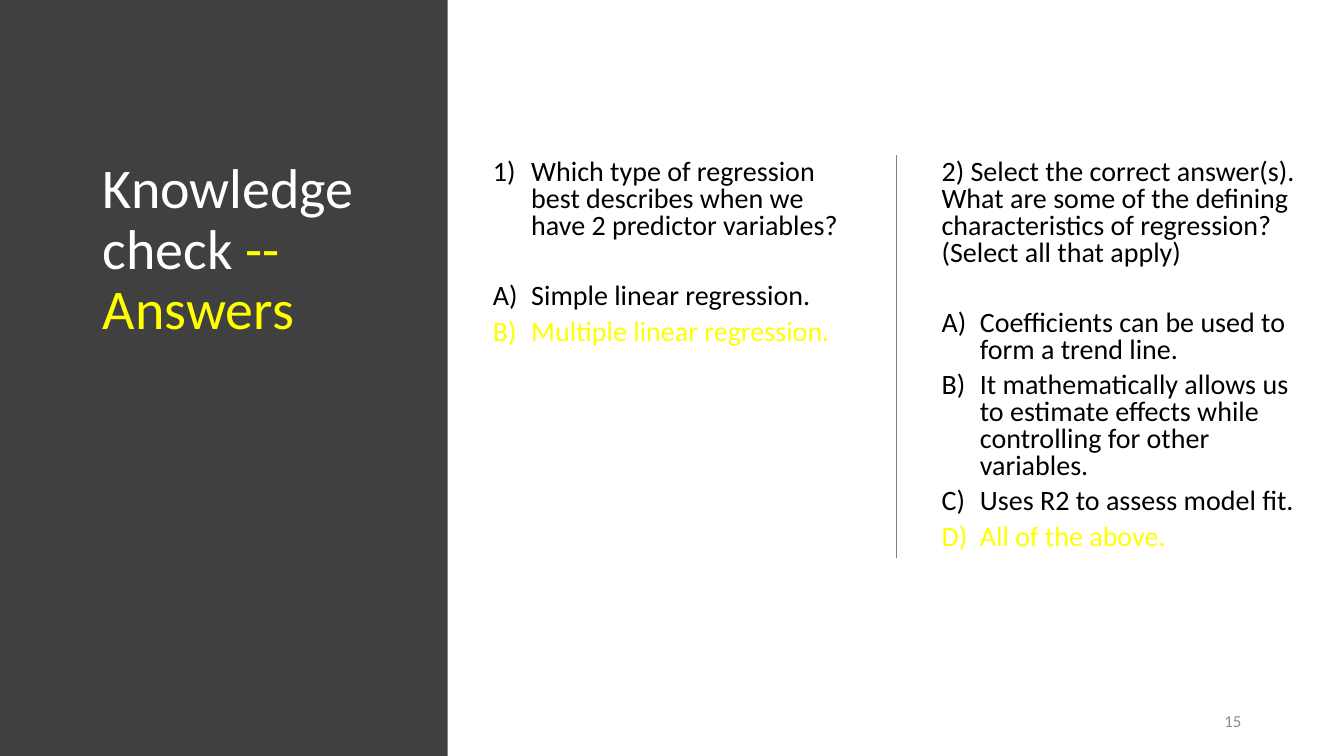
from lxml.etree import SubElement
from pptx import Presentation
from pptx.dml.color import RGBColor
from pptx.enum.shapes import MSO_CONNECTOR, MSO_SHAPE
from pptx.enum.text import MSO_ANCHOR, MSO_AUTO_SIZE, PP_ALIGN
from pptx.oxml.ns import qn
from pptx.util import Inches, Pt

BLACK, WHITE, YELLOW = "000000", "FFFFFF", "FFFF00"
COLUMN_TOP = 1.54
HANGING = 0.38
QUESTION_GAP = 31
ANSWER_GAP = 6


def color(hex_value):
    """Return the colour for a hex string."""
    return RGBColor.from_string(hex_value)


def apply(target, formats):
    """Set each attribute of the target from a dict."""
    for name, value in formats.items():
        setattr(target, name, value)


def place(shape, left, top, width, height):
    """Position a shape, in inches."""
    apply(shape, {"left": Inches(left), "top": Inches(top),
                  "width": Inches(width), "height": Inches(height)})


def add_run(paragraph, text, size, hex_value):
    """Add a Calibri run to a paragraph."""
    run = paragraph.add_run()
    run.text = text
    apply(run.font, {"name": "Calibri", "size": Pt(size)})
    run.font.color.rgb = color(hex_value)


def add_text_box(slide, left, top, width, height, anchor=MSO_ANCHOR.TOP):
    """Add a wrapping text box and return its text frame."""
    frame = slide.shapes.add_textbox(
        Inches(left), Inches(top), Inches(width), Inches(height)).text_frame
    apply(frame, {"word_wrap": True, "auto_size": MSO_AUTO_SIZE.NONE,
                  "vertical_anchor": anchor})
    return frame


def number(paragraph, scheme):
    """Give a paragraph automatic numbering with a hanging indent."""
    properties = paragraph._p.get_or_add_pPr()
    properties.set("marL", str(Inches(HANGING)))
    properties.set("indent", str(-Inches(HANGING)))
    SubElement(properties, qn("a:buFont"), typeface="Calibri")
    SubElement(properties, qn("a:buAutoNum"), type=scheme)


def add_question(slide, left, question, answers, correct, scheme=None):
    """Add a question with lettered answers, the correct one in yellow."""
    frame = add_text_box(slide, left, COLUMN_TOP, 3.75, 4.77)
    rows = [(question, scheme, QUESTION_GAP, BLACK)]
    rows += [(answer, "alphaUcParenR", ANSWER_GAP,
              YELLOW if answer == correct else BLACK) for answer in answers]
    for index, (text, numbering, gap, hex_value) in enumerate(rows):
        paragraph = frame.add_paragraph() if index else frame.paragraphs[0]
        apply(paragraph, {"line_spacing": 0.8, "space_after": Pt(gap)})
        if numbering:
            number(paragraph, numbering)
        add_run(paragraph, text, 20, hex_value)


def add_panel(slide):
    """Add the dark panel behind the title."""
    panel = slide.shapes.add_shape(
        MSO_SHAPE.RECTANGLE, 0, 0, Inches(4.44), Inches(7.5))
    panel.shadow.inherit = False
    panel.fill.solid()
    panel.fill.fore_color.rgb = color("404040")
    panel.line.fill.background()
    slide.shapes.element.insert(2, panel.element)


def fill_title(slide):
    """Place and write the two-coloured title."""
    title = slide.shapes.title
    place(title, 0.92, COLUMN_TOP, 3.17, 4.77)
    apply(title.text_frame, {"vertical_anchor": MSO_ANCHOR.TOP, "word_wrap": True,
                             "auto_size": MSO_AUTO_SIZE.NONE})
    heading = title.text_frame.paragraphs[0]
    apply(heading, {"alignment": PP_ALIGN.LEFT, "line_spacing": 0.9})
    add_run(heading, "Knowledge check", 40, WHITE)
    add_run(heading, " --", 40, YELLOW)
    heading.add_line_break()
    add_run(heading, "Answers", 40, YELLOW)


def add_divider(slide):
    """Add the vertical line between the questions."""
    divider = slide.shapes.add_connector(
        MSO_CONNECTOR.STRAIGHT, Inches(8.89), Inches(COLUMN_TOP),
        Inches(8.89), Inches(5.54))
    divider.line.color.rgb = color("808080")
    divider.line.width = Pt(1)
    SubElement(divider.element.spPr, qn("a:effectLst"))


def add_page_number(slide):
    """Add the page number at the lower right."""
    frame = add_text_box(slide, 10.06, 6.95, 2.35, 0.4, MSO_ANCHOR.MIDDLE)
    page = frame.paragraphs[0]
    apply(page, {"alignment": PP_ALIGN.RIGHT, "space_after": Pt(6)})
    add_run(page, "15", 12, "8C8C8C")


def main():
    """Build and save the slide."""
    deck = Presentation()
    apply(deck, {"slide_width": Inches(13.33), "slide_height": Inches(7.5)})
    slide = deck.slides.add_slide(deck.slide_layouts.get_by_name("Title Only"))
    add_panel(slide)
    fill_title(slide)
    add_question(
        slide, 4.79,
        "Which type of regression best describes when we have 2 predictor variables?",
        ["Simple linear regression.", "Multiple linear regression."],
        "Multiple linear regression.", "arabicParenR")
    add_divider(slide)
    add_question(
        slide, 9.24,
        "2) Select the correct answer(s). What are some of the defining "
        "characteristics of regression? (Select all that apply)",
        ["Coefficients can be used to form a trend line.",
         "It mathematically allows us to estimate effects while controlling "
         "for other variables.",
         "Uses R2 to assess model fit.",
         "All of the above."],
        "All of the above.")
    add_page_number(slide)
    deck.save("out.pptx")


if __name__ == "__main__":
    main()
